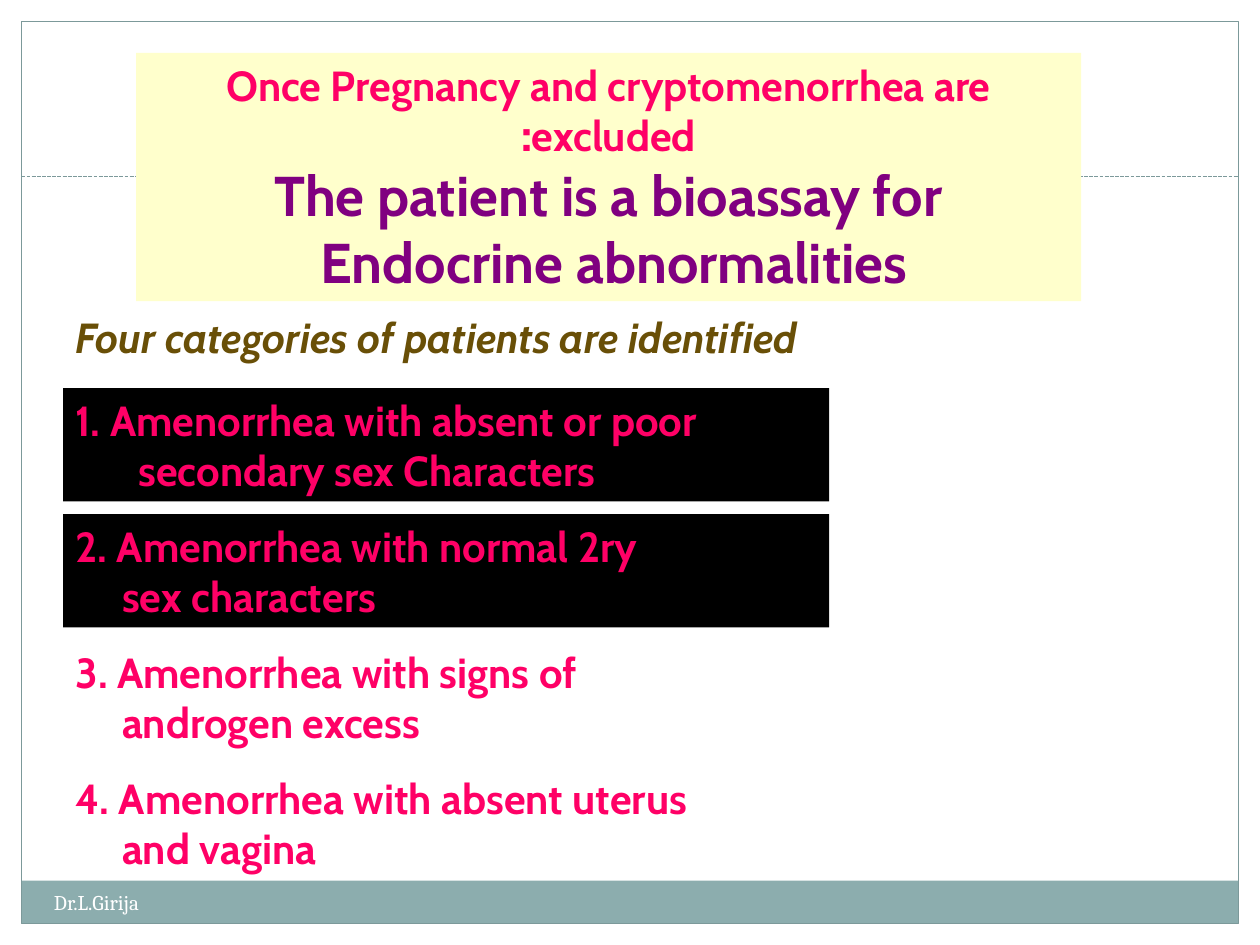
import dataclasses

import lxml.etree
import pptx
import pptx.dml.color
import pptx.enum.dml
import pptx.enum.shapes
import pptx.enum.text
import pptx.oxml.ns
import pptx.util
from pptx.util import Inches

SHAPES = pptx.enum.shapes.MSO_SHAPE


@dataclasses.dataclass(frozen=True)
class Theme:
    heading_font: str = "Cabin"
    footer_font: str = "Cambria"
    pink: str = "FF0066"
    purple: str = "800080"
    brown: str = "694F07"
    cream: str = "FFFFCC"
    black: str = "000000"
    white: str = "FFFFFF"
    band: str = "8CADAE"
    border: str = "7C999A"
    large: int = 32
    normal: int = 24
    small: int = 12
    border_width: float = 0.75


THEME = Theme()


def color(value):
    return pptx.dml.color.RGBColor.from_string(value)


def format_paragraph(paragraph, text, text_color, size=THEME.normal,
                     name=THEME.heading_font, bold=True, italic=False,
                     left=0, first=0, **paragraph_format):
    """Fill one paragraph; left and first are its indents in inches."""
    paragraph.text = text
    properties = paragraph._p.get_or_add_pPr()
    properties.set("marL", str(Inches(left)))
    properties.set("indent", str(Inches(first)))
    for key, value in paragraph_format.items():
        setattr(paragraph, key, value)
    font_format = {"name": name, "size": pptx.util.Pt(size),
                   "bold": bold, "italic": italic}
    for key, value in font_format.items():
        setattr(paragraph.font, key, value)
    paragraph.font.color.rgb = color(text_color)


def fill_text(shape, lines):
    """Write a list of paragraph formats into a top-anchored frame."""
    frame = shape.text_frame
    frame_format = {"word_wrap": True,
                    "auto_size": pptx.enum.text.MSO_AUTO_SIZE.NONE,
                    "vertical_anchor": pptx.enum.text.MSO_ANCHOR.TOP}
    for key, value in frame_format.items():
        setattr(frame, key, value)
    for index, line in enumerate(lines):
        paragraph = frame.add_paragraph() if index else frame.paragraphs[0]
        format_paragraph(paragraph, **line)


def add_rectangle(slide, box, fill=None, line=None):
    shape = slide.shapes.add_shape(SHAPES.RECTANGLE, *map(Inches, box))
    shape.shadow.inherit = False
    if fill:
        shape.fill.solid()
        shape.fill.fore_color.rgb = color(fill)
    else:
        shape.fill.background()
    if line:
        shape.line.color.rgb = color(line)
        shape.line.width = pptx.util.Pt(THEME.border_width)
    else:
        shape.line.fill.background()
    return shape


def add_frame(slide, box, band_height=0.34, divider_top=1.4):
    """Footer band, page border and dashed divider."""
    left, top, width, height = box
    bottom, right = top + height, left + width
    add_rectangle(slide, (left, bottom - band_height, width, band_height),
                  fill=THEME.band)
    add_rectangle(slide, box, line=THEME.border)
    divider = slide.shapes.add_connector(
        pptx.enum.shapes.MSO_CONNECTOR.STRAIGHT,
        Inches(left), Inches(divider_top), Inches(right), Inches(divider_top))
    divider.line.color.rgb = color(THEME.border)
    divider.line.width = pptx.util.Pt(THEME.border_width)
    divider.line.dash_style = pptx.enum.dml.MSO_LINE.SQUARE_DOT
    lxml.etree.SubElement(divider._element.spPr,
                          pptx.oxml.ns.qn("a:effectLst"))


def add_heading(slide, box):
    """Title placeholder on a cream panel, in front of the frame."""
    title = slide.shapes.title
    for key, value in zip(("left", "top", "width", "height"), box):
        setattr(title, key, Inches(value))
    title.fill.solid()
    title.fill.fore_color.rgb = color(THEME.cream)
    center = {"alignment": pptx.enum.text.PP_ALIGN.CENTER}
    large = {"text_color": THEME.purple, "size": THEME.large, **center}
    fill_text(title, [
        {"text": "Once Pregnancy and cryptomenorrhea are excluded:",
         "text_color": THEME.pink, **center},
        {"text": "The patient is a bioassay for", **large},
        {"text": "Endocrine abnormalities", "left": 0.09, **large},
    ])
    # The first two lines run right to left
    for paragraph in title.text_frame.paragraphs[:2]:
        paragraph._p.get_or_add_pPr().set("rtl", "1")
    slide.shapes._spTree.append(title._element)


def add_label(slide, box, **line):
    label = slide.shapes.add_textbox(*map(Inches, box))
    fill_text(label, [line])


def add_categories(slide, box, pitch=1.0):
    """Numbered panels stacked at an equal pitch."""
    categories = [
        (THEME.black, [("1. Amenorrhea with absent or poor "
                        "secondary sex Characters", 0.5, -0.5)]),
        (THEME.black, [("2. Amenorrhea with normal 2ry", 0, 0),
                       ("sex characters", 0.37, 0)]),
        (THEME.white, [("3. Amenorrhea with signs of", 0, 0),
                       ("androgen excess", 0.37, 0)]),
        (THEME.white, [("4. Amenorrhea with absent uterus", 0, 0),
                       ("and vagina", 0.37, 0)]),
    ]
    left, top, width, height = box
    for index, (fill, lines) in enumerate(categories):
        panel = add_rectangle(
            slide, (left, top + index * pitch, width, height), fill=fill)
        fill_text(panel, [
            {"text": text, "left": indent, "first": first,
             "text_color": THEME.pink,
             "alignment": pptx.enum.text.PP_ALIGN.LEFT}
            for text, indent, first in lines])


def main():
    presentation = pptx.Presentation()
    presentation.slide_width = Inches(10)
    presentation.slide_height = Inches(7.5)
    slide = presentation.slides.add_slide(presentation.slide_layouts[5])

    add_frame(slide, (0.17, 0.17, 9.66, 7.16))
    add_heading(slide, (1.08, 0.42, 7.5, 1.97))
    add_label(slide, (0.5, 2.42, 7.17, 0.5),
              text="Four categories of patients are identified",
              text_color=THEME.brown, italic=True)
    add_categories(slide, (0.5, 3.08, 6.08, 0.9))
    add_label(slide, (0.33, 7.01, 3.92, 0.4), text="Dr.L.Girija",
              text_color=THEME.white, size=THEME.small,
              name=THEME.footer_font, bold=False)

    presentation.save("out.pptx")


if __name__ == "__main__":
    main()
